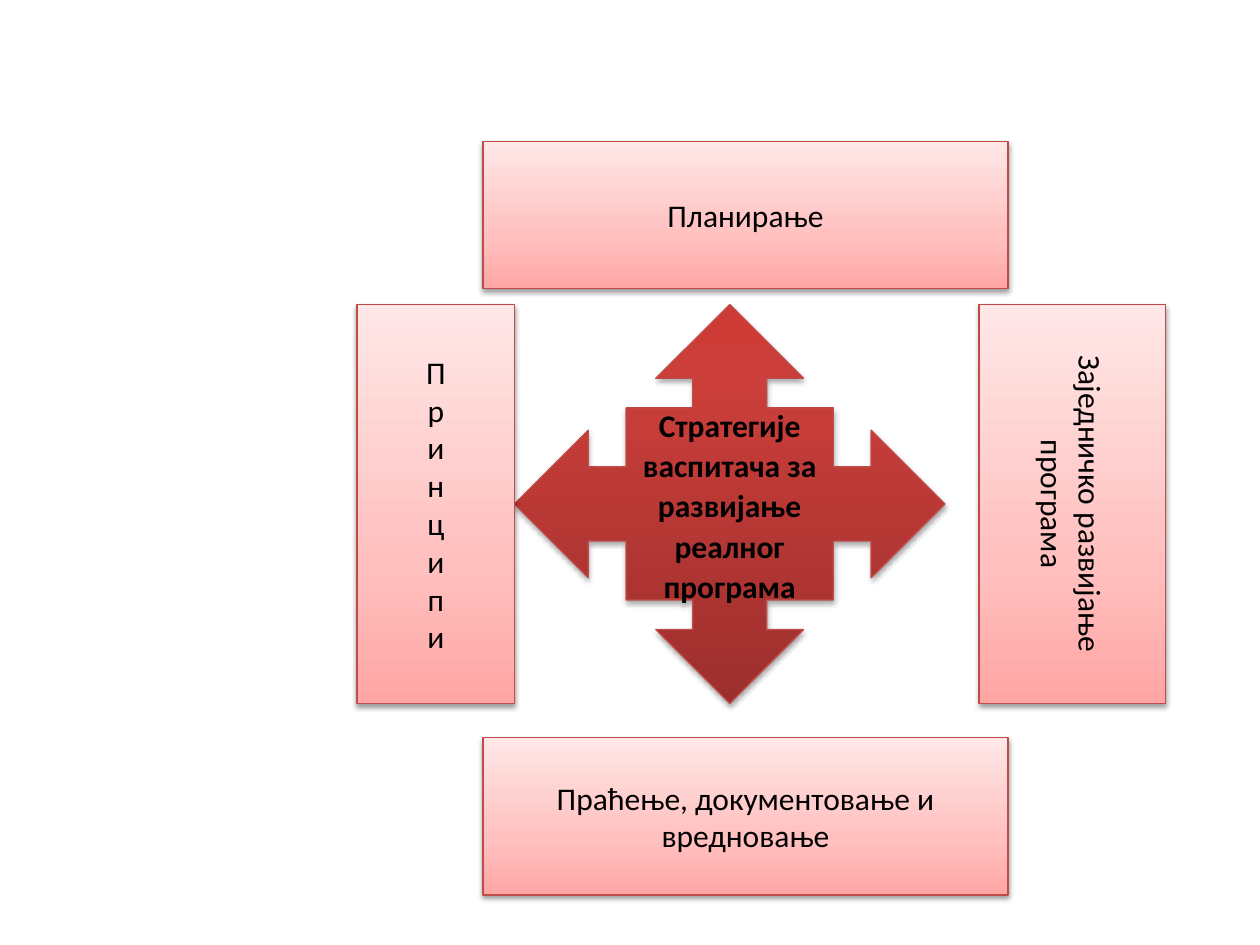
import pptx
import pptx.dml.color
import pptx.enum.shapes
import pptx.enum.text
import pptx.oxml
import pptx.oxml.ns
import pptx.util

SHAPE = pptx.enum.shapes.MSO_SHAPE
NS = pptx.oxml.ns.nsdecls("a")
COLS, ROWS = 120, 90
PALE = [(0, "FFA6A5"), (35, "FFC0BF"), (100, "FFE7E7")]
DARK = [(0, "9C2F2D"), (80, "CB3E3A"), (100, "CE3B37")]


def color(code):
    """Turn a hex string into a colour."""
    return pptx.dml.color.RGBColor.from_string(code)


def write(shape, text, bold=False, lead=None, after=None, turn=None):
    """Put centred text into a shape."""
    frame = shape.text_frame
    frame.word_wrap = True
    frame.vertical_anchor = pptx.enum.text.MSO_ANCHOR.MIDDLE
    if turn:
        frame._txBody.bodyPr.set("vert", turn)
    para = frame.paragraphs[0]
    para.alignment = pptx.enum.text.PP_ALIGN.CENTER
    para.line_spacing = lead
    if after:
        para.space_after = pptx.util.Pt(after)
    run = para.add_run()
    run.text = text
    font = run.font
    font.name, font.size, font.bold = "Calibri", pptx.util.Pt(18), bold
    font.color.rgb = color("000000")


class Board:
    """Hold the shape style and the current slide."""

    edge = "BF4C48"

    def __init__(self, deck):
        """Add a blank slide and measure its grid."""
        self.slide = deck.slides.add_slide(deck.slide_layouts[6])
        self.col = deck.slide_width / COLS
        self.row = deck.slide_height / ROWS

    def shape(self, kind, place, stops, alpha, drop):
        """Draw a shaded shape at a grid place."""
        x, y, w, h = place
        shape = self.slide.shapes.add_shape(
            kind, int(x * self.col), int(y * self.row),
            int(w * self.col), int(h * self.row))
        shape.line.color.rgb = color(self.edge)
        shape.line.width = pptx.util.Pt(0.75)
        shape.shadow.inherit = False
        self.shade(shape, stops)
        self.shadow(shape, alpha, drop)
        return shape

    def shade(self, shape, stops):
        """Fill a shape with an upward gradient."""
        marks = "".join(
            f'<a:gs pos="{pos * 1000}"><a:srgbClr val="{code}"/></a:gs>'
            for pos, code in stops)
        fill = pptx.oxml.parse_xml(
            f'<a:gradFill {NS} rotWithShape="1"><a:gsLst>{marks}</a:gsLst>'
            '<a:lin ang="16200000" scaled="0"/></a:gradFill>')
        shape._element.spPr.find(pptx.oxml.ns.qn("a:ln")).addprevious(fill)

    def shadow(self, shape, alpha, drop):
        """Cast a soft shadow straight down."""
        blur, dist = pptx.util.Pt(3.1), pptx.util.Pt(drop)
        cast = pptx.oxml.parse_xml(
            f'<a:outerShdw {NS} blurRad="{blur}" dist="{dist}" dir="5400000" '
            'rotWithShape="0"><a:srgbClr val="000000">'
            f'<a:alpha val="{alpha * 1000}"/></a:srgbClr></a:outerShdw>')
        shape._element.spPr.find(pptx.oxml.ns.qn("a:effectLst")).append(cast)

    def hub(self, place, text):
        """Draw the central four-way arrow."""
        shape = self.shape(SHAPE.QUAD_ARROW_CALLOUT, place, DARK, 35, 1.8)
        write(shape, text, bold=True, lead=1.07, after=8)

    def box(self, place, text, turn=None):
        """Draw a pale labelled box."""
        shape = self.shape(SHAPE.RECTANGLE, place, PALE, 38, 1.6)
        write(shape, text, turn=turn)


def main():
    """Build and save the slide."""
    deck = pptx.Presentation()
    deck.slide_width = pptx.util.Inches(10)
    deck.slide_height = pptx.util.Inches(7.5)
    board = Board(deck)
    board.hub((49, 29, 41, 38),
              "Стратегије васпитача за развијање реалног програма")
    board.box((46, 13.5, 50, 14), "Планирање")
    board.box((34, 29, 15, 38), "Принципи", turn="wordArtVert")
    board.box((93.25, 29, 17.75, 38), "Заједничко развијање програма",
              turn="vert")
    board.box((46, 70.25, 50, 15), "Праћење, документовање и вредновање")
    deck.save("out.pptx")


if __name__ == "__main__":
    main()
